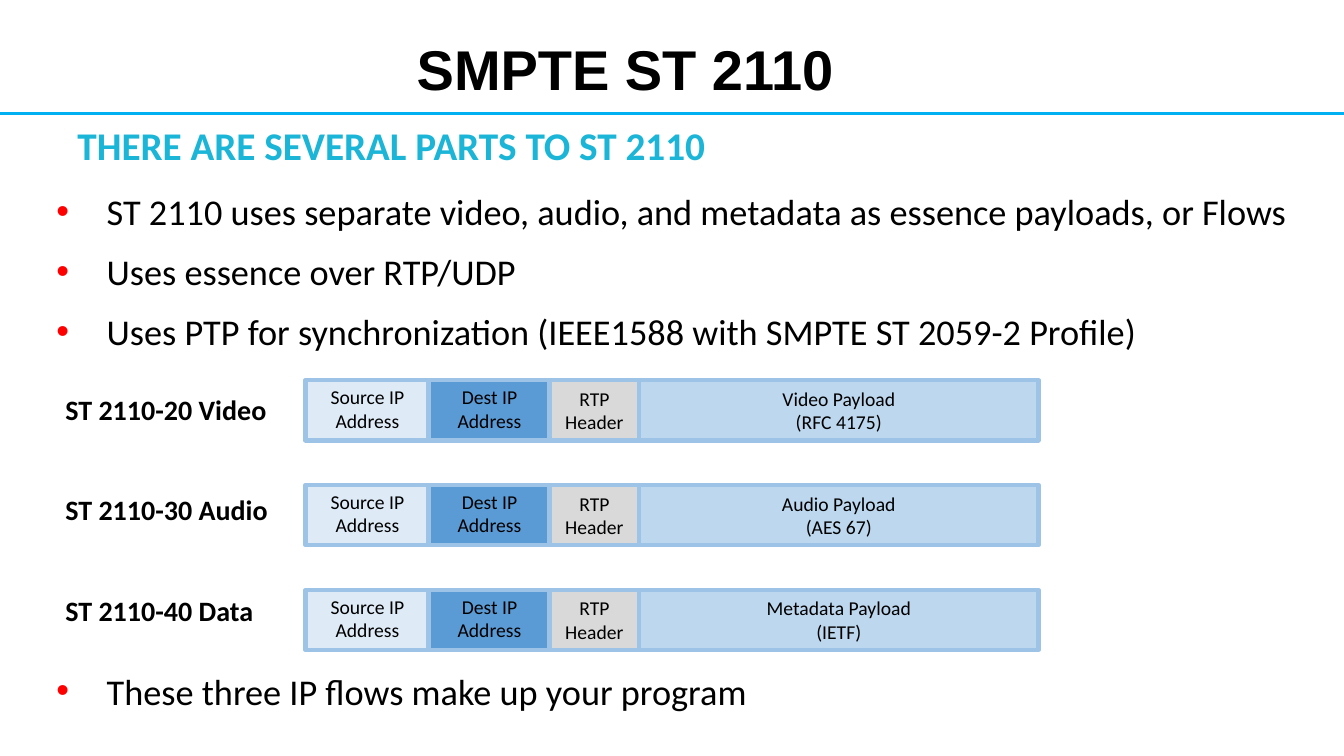
from dataclasses import dataclass

from lxml import etree
from pptx import Presentation
from pptx.dml.color import RGBColor
from pptx.enum.shapes import MSO_CONNECTOR, MSO_SHAPE
from pptx.enum.text import MSO_ANCHOR, PP_ALIGN
from pptx.oxml.ns import qn
from pptx.slide import Slide
from pptx.text.text import TextFrame
from pptx.util import Pt

PX = 9144  # EMU per px, 100 px to the inch
RECT, STRAIGHT = MSO_SHAPE.RECTANGLE, MSO_CONNECTOR.STRAIGHT
LEFT, CENTER = PP_ALIGN.LEFT, PP_ALIGN.CENTER
TOP, MIDDLE = MSO_ANCHOR.TOP, MSO_ANCHOR.MIDDLE


@dataclass(frozen=True)
class Theme:
    black: str = "000000"
    rule: str = "00B0F0"
    heading: str = "1AB5D7"
    bullet: str = "FF0000"
    border: str = "9DC3E6"
    source: str = "DEEBF7"
    dest: str = "5B9BD5"
    rtp: str = "D9D9D9"
    payload: str = "BDD7EE"
    title_font: str = "Arial"
    body_font: str = "Calibri"
    title_size: float = 40
    heading_size: float = 28
    body_size: float = 25.9
    label_size: float = 20
    field_size: float = 14


THEME = Theme()


@dataclass(frozen=True)
class Box:
    x: int
    y: int
    w: int
    h: int

    def emu(self) -> tuple[int, int, int, int]:
        return self.x * PX, self.y * PX, self.w * PX, self.h * PX


@dataclass(frozen=True)
class Style:
    size: float
    font: str = THEME.body_font
    color: str = THEME.black
    bold: bool = False
    align: PP_ALIGN = LEFT
    anchor: MSO_ANCHOR = TOP


@dataclass(frozen=True)
class Field:
    """One part of a packet; an empty text is filled by the flow's payload."""
    text: str
    x: int
    w: int
    fill: str
    anchor: MSO_ANCHOR


@dataclass(frozen=True)
class Flow:
    label: str
    payload: str


FIELDS = (
    Field("Source IP Address", 303, 123, THEME.source, TOP),
    Field("Dest IP Address", 425, 121, THEME.dest, TOP),
    Field("RTP Header", 545, 89, THEME.rtp, MIDDLE),
    Field("", 634, 396, THEME.payload, MIDDLE),
)
FLOWS = (
    Flow("ST 2110-20 Video", "Video Payload\n(RFC 4175)"),
    Flow("ST 2110-30 Audio", "Audio Payload\n(AES 67)"),
    Flow("ST 2110-40 Data", "Metadata Payload\n(IETF)"),
)
PACKET_Y, PACKET_PITCH, PACKET_H = 377, 104, 60
LABEL_Y, LABEL_PITCH = 384, 100
BULLETS = (
    "ST 2110 uses separate video, audio, and metadata as essence payloads, or Flows",
    "Uses essence over RTP/UDP",
    "Uses PTP for synchronization (IEEE1588 with SMPTE ST 2059-2 Profile)",
)
CLOSING = ("These three IP flows make up your program",)


def set_text(tf: TextFrame, text: str, style: Style) -> None:
    tf.text = text
    tf.word_wrap = True
    tf.vertical_anchor = style.anchor
    for p in tf.paragraphs:
        p.alignment = style.align
        for r in p.runs:
            r.font.size = Pt(style.size)
            r.font.name = style.font
            r.font.bold = style.bold
            r.font.color.rgb = RGBColor.from_string(style.color)


def add_text(slide: Slide, box: Box, text: str, style: Style) -> TextFrame:
    tf = slide.shapes.add_textbox(*box.emu()).text_frame
    set_text(tf, text, style)
    return tf


def add_bullets(slide: Slide, box: Box, items: tuple[str, ...]) -> None:
    tf = add_text(slide, box, "\n".join(items), Style(THEME.body_size))
    for i, p in enumerate(tf.paragraphs):
        pPr = p._p.get_or_add_pPr()
        pPr.set("marL", str(50 * PX))
        pPr.set("indent", str(-50 * PX))
        color = etree.SubElement(pPr, qn("a:buClr"))
        etree.SubElement(color, qn("a:srgbClr"), val=THEME.bullet)
        etree.SubElement(pPr, qn("a:buFont"), typeface="Arial")
        etree.SubElement(pPr, qn("a:buChar"), char="•")
        p.line_spacing = 0.8
        if i:
            p.space_before = Pt(18)


def add_rule(slide: Slide, y: int, width: int) -> None:
    line = slide.shapes.add_connector(STRAIGHT, 0, y * PX, width * PX, y * PX)
    line.line.color.rgb = RGBColor.from_string(THEME.rule)
    line.line.width = Pt(2)
    etree.SubElement(line._element.spPr, qn("a:effectLst"))


def add_field(slide: Slide, field: Field, y: int, text: str) -> None:
    box = Box(field.x, y, field.w, PACKET_H)
    sp = slide.shapes.add_shape(RECT, *box.emu())
    sp.shadow.inherit = False
    sp.fill.solid()
    sp.fill.fore_color.rgb = RGBColor.from_string(field.fill)
    sp.line.color.rgb = RGBColor.from_string(THEME.border)
    sp.line.width = Pt(3)
    set_text(sp.text_frame, text,
             Style(THEME.field_size, align=CENTER, anchor=field.anchor))


def main() -> None:
    prs = Presentation()
    prs.slide_width, prs.slide_height = 1333 * PX, 750 * PX
    slide = prs.slides.add_slide(prs.slide_layouts[6])

    add_rule(slide, 113, 1333)
    add_text(slide, Box(160, 38, 920, 60), "SMPTE ST 2110",
             Style(THEME.title_size, THEME.title_font, bold=True,
                   align=CENTER, anchor=MIDDLE))
    heading = add_text(slide, Box(67, 129, 1200, 37),
                       "THERE ARE SEVERAL PARTS TO ST 2110",
                       Style(THEME.heading_size, color=THEME.heading, bold=True))
    heading.paragraphs[0].line_spacing = Pt(24)

    add_bullets(slide, Box(46, 191, 1259, 165), BULLETS)
    for i, flow in enumerate(FLOWS):
        add_text(slide, Box(55, LABEL_Y + i * LABEL_PITCH, 240, 44), flow.label,
                 Style(THEME.label_size, bold=True))
        for field in FIELDS:
            add_field(slide, field, PACKET_Y + i * PACKET_PITCH,
                      field.text or flow.payload)
    add_bullets(slide, Box(46, 667, 1259, 49), CLOSING)

    prs.save("out.pptx")


if __name__ == "__main__":
    main()
